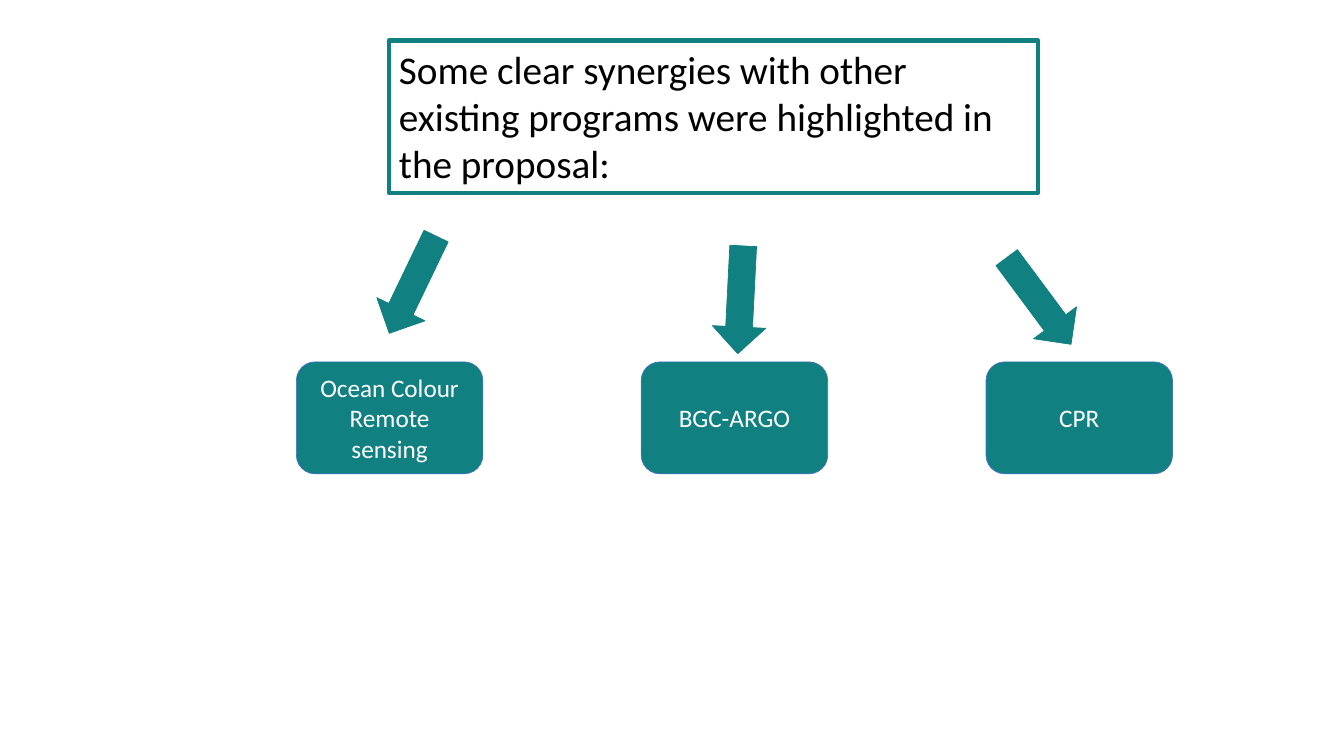
from dataclasses import dataclass

from pptx import Presentation
from pptx.dml.color import RGBColor
from pptx.enum.shapes import MSO_SHAPE
from pptx.enum.text import MSO_ANCHOR, MSO_AUTO_SIZE, PP_ALIGN
from pptx.util import Cm, Pt

HEADING = ("Some clear synergies with other existing programs "
           "were highlighted in the proposal:")

# Program, then its arrow: left and top in cm, rotation in degrees
PROGRAMS = [
    ("Ocean Colour Remote sensing", (9.04, 6.5, 115.7)),
    ("BGC-ARGO", (17.3, 6.88, 92.9)),
    ("CPR", (24.82, 6.91, 53.4)),
]


@dataclass(frozen=True)
class Theme:
    font: str = "Calibri"
    teal: RGBColor = RGBColor(0x10, 0x80, 0x80)
    blue: RGBColor = RGBColor(0x44, 0x72, 0xC4)
    white: RGBColor = RGBColor(0xFF, 0xFF, 0xFF)
    black: RGBColor = RGBColor(0, 0, 0)
    heading_size: Pt = Pt(28)
    program_size: Pt = Pt(18)
    heading_line: Pt = Pt(3)
    thin_line: Pt = Pt(0.5)


THEME = Theme()

PROGRAM_LEFT, PROGRAM_TOP, PROGRAM_PITCH = 7.47, 9.12, 8.69
PROGRAM_WIDTH, PROGRAM_HEIGHT = 4.7, 2.82
ARROW_WIDTH, ARROW_HEIGHT = 2.72, 1.35


def paint(shape, fill, line, line_width):
    shape.fill.solid()
    shape.fill.fore_color.rgb = fill
    shape.line.color.rgb = line
    shape.line.width = line_width


def write(shape, text, size, color, align, anchor):
    frame = shape.text_frame
    frame.word_wrap = True
    frame.auto_size = MSO_AUTO_SIZE.NONE
    frame.vertical_anchor = anchor
    paragraph = frame.paragraphs[0]
    paragraph.alignment = align
    run = paragraph.add_run()
    run.text = text
    run.font.name = THEME.font
    run.font.size = size
    run.font.color.rgb = color


def add_block(slide, preset, left, top, width, height, line):
    block = slide.shapes.add_shape(preset, Cm(left), Cm(top), Cm(width), Cm(height))
    block.shadow.inherit = False
    paint(block, THEME.teal, line, THEME.thin_line)
    return block


def add_heading(slide):
    heading = slide.shapes.title
    heading.left, heading.top = Cm(9.8), Cm(1.02)
    heading.width, heading.height = Cm(16.36), Cm(3.84)
    paint(heading, THEME.white, THEME.teal, THEME.heading_line)
    write(heading, HEADING, THEME.heading_size, THEME.black,
          PP_ALIGN.LEFT, MSO_ANCHOR.TOP)


def main():
    deck = Presentation()
    deck.slide_width, deck.slide_height = Cm(33.87), Cm(19.05)
    slide = deck.slides.add_slide(deck.slide_layouts.get_by_name("Title Only"))

    add_heading(slide)
    for column, (name, (arrow_left, arrow_top, angle)) in enumerate(PROGRAMS):
        program = add_block(slide, MSO_SHAPE.ROUNDED_RECTANGLE,
                            PROGRAM_LEFT + column * PROGRAM_PITCH, PROGRAM_TOP,
                            PROGRAM_WIDTH, PROGRAM_HEIGHT, THEME.blue)
        write(program, name, THEME.program_size, THEME.white,
              PP_ALIGN.CENTER, MSO_ANCHOR.MIDDLE)
        arrow = add_block(slide, MSO_SHAPE.RIGHT_ARROW, arrow_left, arrow_top,
                          ARROW_WIDTH, ARROW_HEIGHT, THEME.teal)
        arrow.rotation = angle

    deck.save("out.pptx")


if __name__ == "__main__":
    main()
